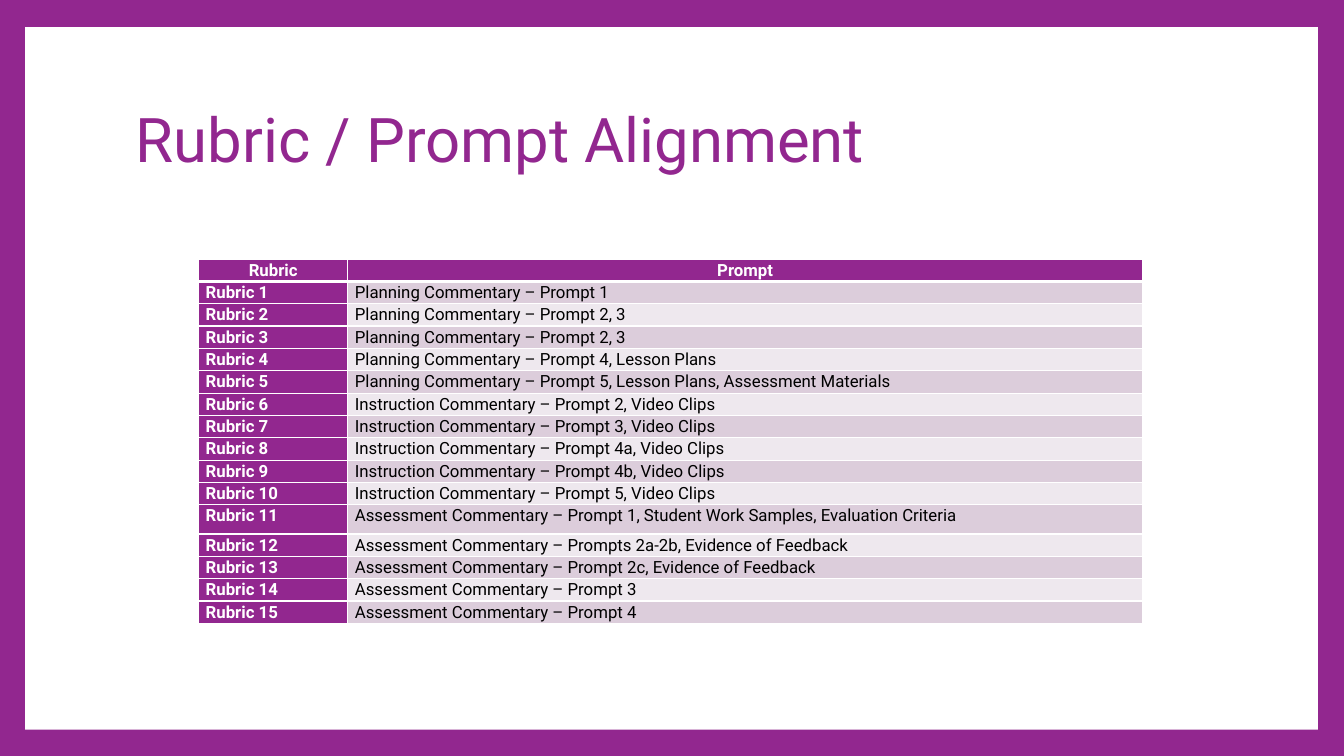
from dataclasses import dataclass

from lxml import etree
from pptx import Presentation
from pptx import util as u
from pptx.dml import color
from pptx.enum import shapes, text
from pptx.oxml import ns


@dataclass(frozen=True)
class Theme:
    font: str = "Roboto"
    purple: str = "92278F"
    white: str = "FFFFFF"
    black: str = "000000"
    bands: tuple = ("DCCDDB", "EEE8EE")
    title_size: int = 44
    table_size: int = 12
    thin_border: int = 1
    header_border: int = 3


THEME = Theme()

PROMPTS = [
    "Planning Commentary – Prompt 1",
    "Planning Commentary – Prompt 2, 3",
    "Planning Commentary – Prompt 2, 3",
    "Planning Commentary – Prompt 4, Lesson Plans",
    "Planning Commentary – Prompt 5, Lesson Plans, Assessment Materials",
    "Instruction Commentary – Prompt 2, Video Clips",
    "Instruction Commentary – Prompt 3, Video Clips",
    "Instruction Commentary – Prompt 4a, Video Clips",
    "Instruction Commentary – Prompt 4b, Video Clips",
    "Instruction Commentary – Prompt 5, Video Clips",
    "Assessment Commentary – Prompt 1, Student Work Samples, Evaluation Criteria",
    "Assessment Commentary – Prompts 2a-2b, Evidence of Feedback",
    "Assessment Commentary – Prompt 2c, Evidence of Feedback",
    "Assessment Commentary – Prompt 3",
    "Assessment Commentary – Prompt 4",
]
TALL_RUBRIC = 11


def paint(fill, hex_color):
    fill.solid()
    fill.fore_color.rgb = color.RGBColor.from_string(hex_color)


def write(frame, words, *, size, ink, bold=False, centered=False, spacing=1.0):
    paragraph = frame.paragraphs[0]
    paragraph.alignment = text.PP_ALIGN.CENTER if centered else text.PP_ALIGN.LEFT
    paragraph.line_spacing = spacing
    run = paragraph.add_run()
    run.text = words
    run.font.name = THEME.font
    run.font.size = u.Pt(size)
    run.font.bold = bold
    run.font.color.rgb = color.RGBColor.from_string(ink)


def add_panel(slide):
    panel = slide.shapes.add_shape(
        shapes.MSO_SHAPE.RECTANGLE,
        u.Inches(0.25), u.Inches(0.27), u.Inches(12.82), u.Inches(6.97),
    )
    panel.shadow.inherit = False
    paint(panel.fill, THEME.white)
    panel.line.fill.background()


def add_title(slide, words):
    box = slide.shapes.add_textbox(
        u.Inches(1.25), u.Inches(0.67), u.Inches(10.8), u.Inches(1.48)
    )
    frame = box.text_frame
    frame.word_wrap = True
    frame.vertical_anchor = text.MSO_ANCHOR.MIDDLE
    write(frame, words, size=THEME.title_size, ink=THEME.purple, spacing=0.9)


def add_borders(cell, top, bottom):
    properties = cell._tc.get_or_add_tcPr()
    widths = {"L": THEME.thin_border, "R": THEME.thin_border, "T": top, "B": bottom}
    for side, width in widths.items():
        line = etree.SubElement(properties, ns.qn(f"a:ln{side}"), w=str(u.Pt(width)))
        fill = etree.SubElement(line, ns.qn("a:solidFill"))
        etree.SubElement(fill, ns.qn("a:srgbClr"), val=THEME.white)


def fill_cell(cell, words, *, fill, ink=THEME.white, bold=True, header=False,
              top=THEME.thin_border, bottom=THEME.thin_border):
    cell.margin_left = cell.margin_right = u.Inches(0.07)
    cell.margin_top = cell.margin_bottom = 0
    cell.vertical_anchor = text.MSO_ANCHOR.MIDDLE if header else text.MSO_ANCHOR.TOP
    add_borders(cell, top, bottom)
    paint(cell.fill, fill)
    write(cell.text_frame, words, size=THEME.table_size, ink=ink, bold=bold,
          centered=header, spacing=1.07)


def add_rubric_table(slide):
    table = slide.shapes.add_table(
        len(PROMPTS) + 1, 2,
        u.Inches(1.97), u.Inches(2.57), u.Inches(9.36), u.Inches(3.62),
    ).table
    table.first_row = table.horz_banding = False
    for column, width in zip(table.columns, (1.48, 7.88)):
        column.width = u.Inches(width)
    for number, row in enumerate(table.rows):
        row.height = u.Inches(0.29) if number == TALL_RUBRIC else u.Inches(3.33) // 15

    for column, heading in enumerate(("Rubric", "Prompt")):
        fill_cell(table.cell(0, column), heading, fill=THEME.purple, header=True,
                  bottom=THEME.header_border)
    for number, prompt in enumerate(PROMPTS, start=1):
        top = THEME.header_border if number == 1 else THEME.thin_border
        fill_cell(table.cell(number, 0), f"Rubric {number}", fill=THEME.purple, top=top)
        fill_cell(table.cell(number, 1), prompt, fill=THEME.bands[(number - 1) % 2],
                  ink=THEME.black, bold=False, top=top)


def main():
    presentation = Presentation()
    presentation.slide_width = u.Inches(13.33)
    presentation.slide_height = u.Inches(7.5)
    slide = presentation.slides.add_slide(presentation.slide_layouts[6])
    paint(slide.background.fill, THEME.purple)
    add_panel(slide)
    add_title(slide, "Rubric / Prompt Alignment")
    add_rubric_table(slide)
    presentation.save("out.pptx")


if __name__ == "__main__":
    main()
